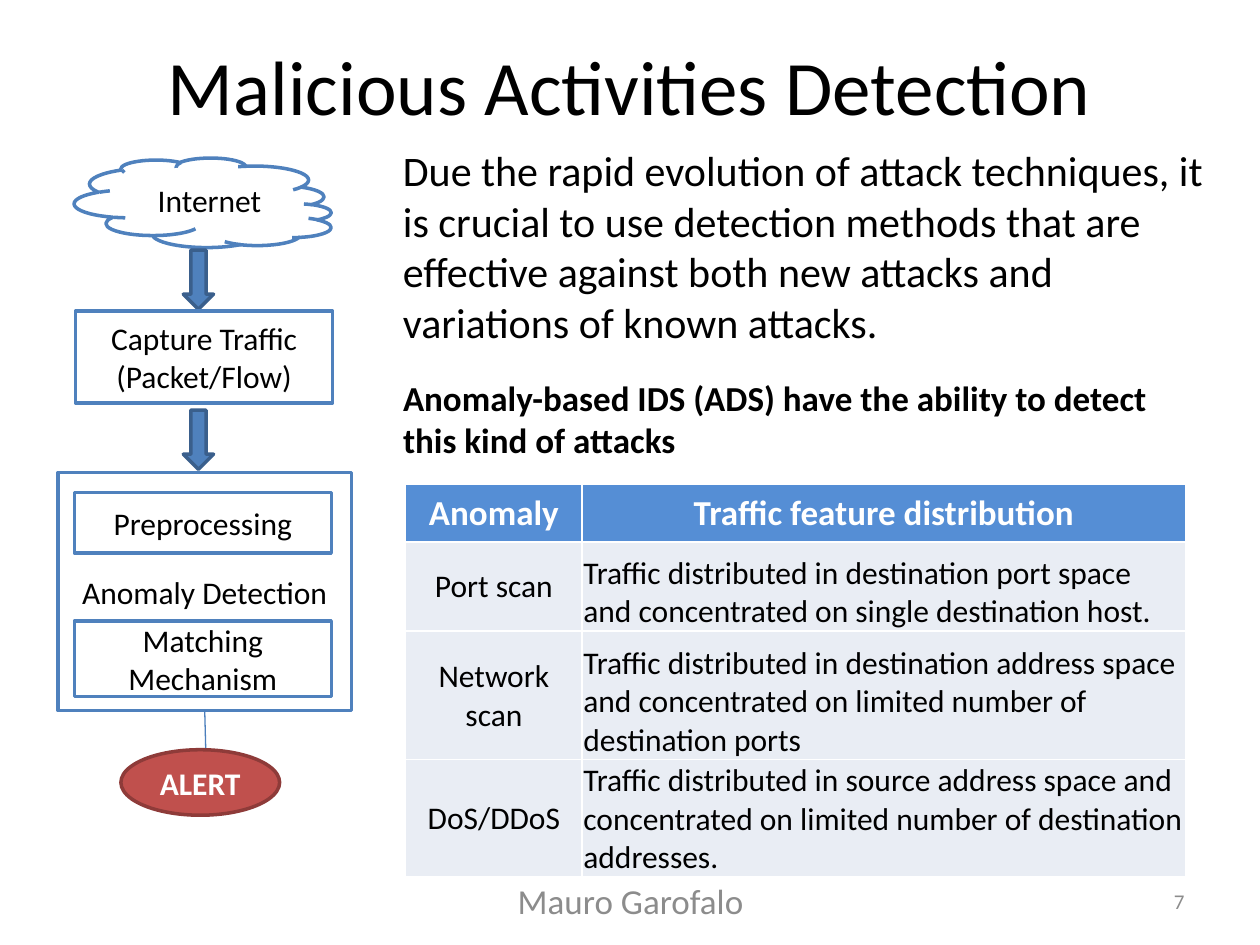
from lxml import etree
from pptx import Presentation
from pptx.dml.color import RGBColor
from pptx.enum.shapes import MSO_CONNECTOR, MSO_SHAPE
from pptx.enum.text import MSO_ANCHOR, PP_ALIGN
from pptx.oxml.ns import qn
from pptx.util import Inches, Pt

RECT, CLOUD = MSO_SHAPE.RECTANGLE, MSO_SHAPE.CLOUD
ARROW, OVAL = MSO_SHAPE.RIGHT_ARROW, MSO_SHAPE.OVAL
LEFT, CENTER, RIGHT = PP_ALIGN.LEFT, PP_ALIGN.CENTER, PP_ALIGN.RIGHT
TOP, MIDDLE, BOTTOM = MSO_ANCHOR.TOP, MSO_ANCHOR.MIDDLE, MSO_ANCHOR.BOTTOM

BLACK, WHITE, GRAY = "000000", "FFFFFF", "8C8C8C"
BLUE, NAVY, WIRE = "4F81BD", "3A5F8C", "4B7EBC"
RED, MAROON = "C0504D", "8E3B39"
HEAD, BAND = "558ED5", "E9EDF4"

ROWS = [
    ("Anomaly", "Traffic feature distribution"),
    ("Port scan", "Traffic distributed in destination port space "
     "and concentrated on single destination host."),
    ("Network scan", "Traffic distributed in destination address space "
     "and concentrated on limited number of destination ports"),
    ("DoS/DDoS", "Traffic distributed in source address space and "
     "concentrated on limited number of destination addresses."),
]


def color(code):
    return RGBColor.from_string(code)


def write(frame, text, size, ink=BLACK, bold=False, align=CENTER, anchor=MIDDLE):
    frame.word_wrap = True
    frame.vertical_anchor = anchor
    frame.text = text
    for para in frame.paragraphs:
        para.alignment = align
        font = para.font
        font.name, font.size, font.bold = "Calibri", Pt(size), bold
        font.color.rgb = color(ink)


def label(slide, box, text, size, **style):
    area = slide.shapes.add_textbox(*map(Inches, box))
    write(area.text_frame, text, size, **style)


def block(slide, kind, box, text="", fill=WHITE, line=BLUE, turn=0, **style):
    shape = slide.shapes.add_shape(kind, *map(Inches, box))
    shape.shadow.inherit = False
    shape.rotation = turn
    shape.fill.solid()
    shape.fill.fore_color.rgb = color(fill)
    shape.line.color.rgb = color(line)
    shape.line.width = Pt(2)
    if text:
        write(shape.text_frame, text, 18, **style)
    return shape


def link(slide, start, x, y):
    """Draw an arrow from the bottom of a block to a point."""
    wire = slide.shapes.add_connector(
        MSO_CONNECTOR.STRAIGHT, 0, 0, Inches(x), Inches(y))
    wire.begin_connect(start, 2)
    wire.line.color.rgb = color(WIRE)
    wire.line.width = Pt(0.75)
    tip = etree.SubElement(wire.line._get_or_add_ln(), qn("a:tailEnd"))
    tip.set("type", "triangle")
    etree.SubElement(wire._element.spPr, qn("a:effectLst"))


def flow(slide, x, y):
    """Draw the detection steps from the cloud down to the alert."""
    # The cloud lies on its side, so its text is turned back upright.
    cloud = block(slide, CLOUD, (x + 0.8, y - 0.67, 0.71, 2.04), "Internet", turn=90)
    cloud.text_frame._txBody.bodyPr.set("vert", "vert270")
    for drop in (0.84, 2.11):
        block(slide, ARROW, (x + 0.88, y + drop, 0.47, 0.24),
              fill=BLUE, line=NAVY, turn=90)
    block(slide, RECT, (x + 0.14, y + 1.21, 2.04, 0.73),
          "Capture Traffic\n(Packet/Flow)")
    detect = block(slide, RECT, (x, y + 2.49, 2.33, 1.89), "Anomaly Detection")
    for drop, high, text in ((2.65, 0.48, "Preprocessing"),
                             (3.67, 0.6, "Matching\nMechanism")):
        block(slide, RECT, (x + 0.13, y + drop, 2.04, high), text)
    link(slide, detect, x + 1.18, y + 4.95)
    block(slide, OVAL, (x + 0.5, y + 4.69, 1.26, 0.52), "ALERT",
          fill=RED, line=MAROON, ink=WHITE, bold=True)


def edge(cell):
    """Give a cell thin white borders."""
    props = cell._tc.get_or_add_tcPr()
    for side in ("a:lnL", "a:lnR", "a:lnT", "a:lnB"):
        line = etree.SubElement(props, qn(side), w=str(Pt(1)))
        fill = etree.SubElement(line, qn("a:solidFill"))
        etree.SubElement(fill, qn("a:srgbClr"), val=WHITE)


def grid(slide, x, y):
    wide, high = (1.4, 4.79), (0.46, 0.71, 1.02, 0.93)
    table = slide.shapes.add_table(
        len(high), len(wide), Inches(x), Inches(y),
        Inches(sum(wide)), Inches(sum(high))).table
    for col, size in zip(table.columns, wide):
        col.width = Inches(size)
    for r, (row, size) in enumerate(zip(table.rows, high)):
        row.height = Inches(size)
        for c, cell in enumerate(row.cells):
            edge(cell)
            cell.margin_left = cell.margin_right = cell.margin_top = Inches(0.01)
            cell.margin_bottom = 0
            cell.fill.solid()
            cell.fill.fore_color.rgb = color(BAND if r else HEAD)
            prose = r > 0 and c == 1
            write(cell.text_frame, ROWS[r][c], 18 if r else 20,
                  ink=BLACK if r else WHITE, bold=r == 0,
                  align=LEFT if prose else CENTER)
            cell.vertical_anchor = BOTTOM if prose else MIDDLE


def story(slide, x, y):
    label(slide, (x, y, 6.63, 1.72),
          "Due the rapid evolution of attack techniques, it is crucial to use "
          "detection methods that are effective against both new attacks and "
          "variations of known attacks.", 24, align=LEFT, anchor=TOP)
    label(slide, (x, y + 1.84, 6.22, 0.77),
          "Anomaly-based IDS (ADS) have the ability to detect this kind of attacks",
          20, bold=True, align=LEFT, anchor=TOP)
    grid(slide, x + 0.12, y + 2.74)


def footer(slide, y):
    label(slide, (3.42, y, 3.17, 0.4), "Mauro Garofalo", 20, ink=GRAY)
    label(slide, (7.17, y, 2.33, 0.4), "7", 12, ink=GRAY, align=RIGHT)


def main():
    deck = Presentation()
    deck.slide_width, deck.slide_height = Inches(10), Inches(7.5)
    slide = deck.slides.add_slide(deck.slide_layouts[6])
    label(slide, (0.5, 0.05, 9, 1.25), "Malicious Activities Detection", 44)
    flow(slide, 0.46, 1.26)
    story(slide, 3.1, 1.1)
    footer(slide, 6.95)
    deck.save("out.pptx")


if __name__ == "__main__":
    main()
